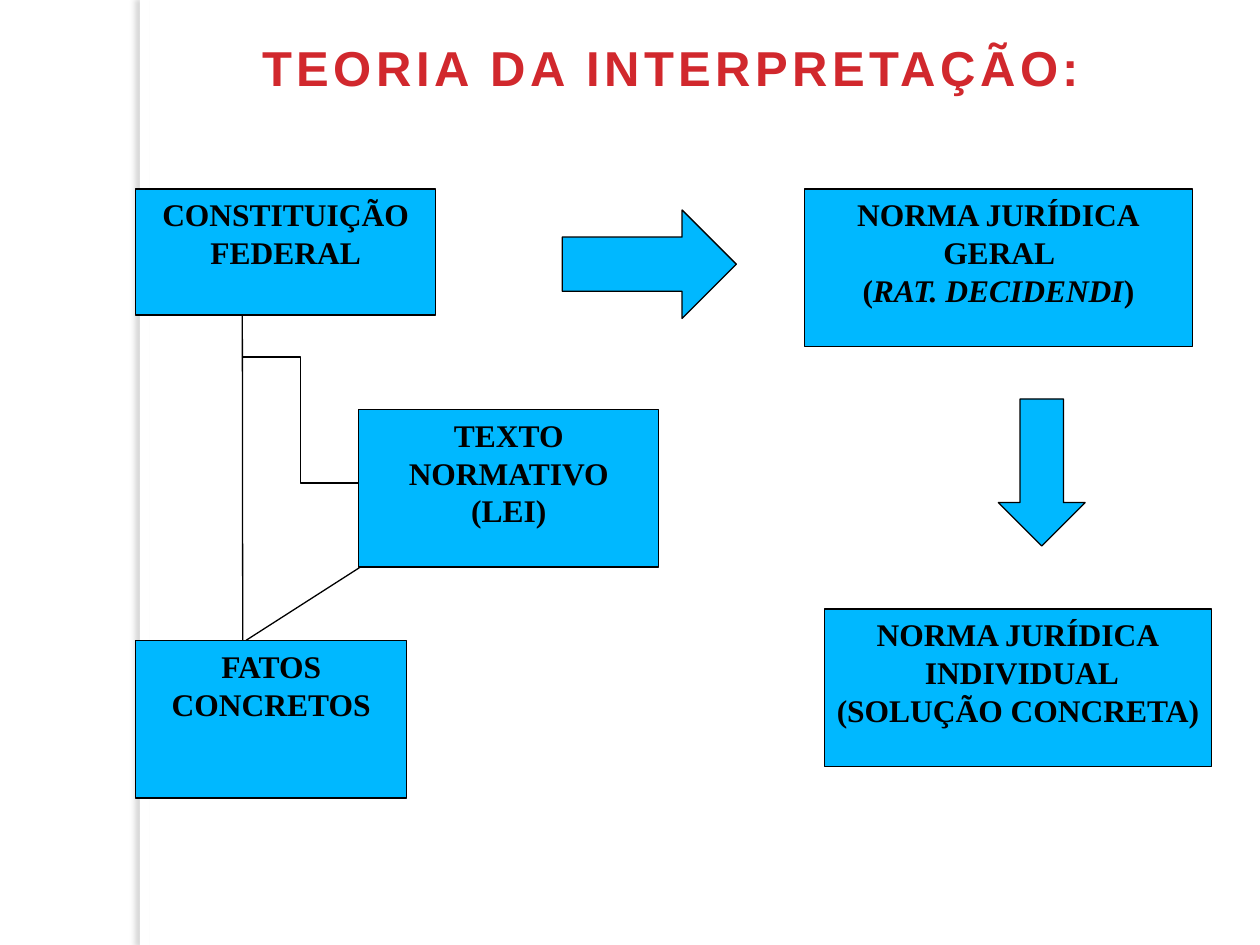
from dataclasses import dataclass
from typing import Any

from lxml.etree import SubElement
from pptx import Presentation
from pptx.dml.color import RGBColor
from pptx.enum.shapes import MSO_CONNECTOR as Link, MSO_SHAPE as Form
from pptx.enum.text import MSO_ANCHOR as Anchor, MSO_AUTO_SIZE as Fit, PP_ALIGN as Align
from pptx.oxml.ns import qn
from pptx.util import Pt

BLACK = RGBColor(0, 0, 0)
WHITE = RGBColor(255, 255, 255)
BLUE = RGBColor(0x00, 0xB8, 0xFF)
RED = RGBColor(0xD1, 0x28, 0x2D)
GREY = RGBColor(0x68, 0x68, 0x68)


def write(frame, text, font="Times New Roman", size=18, color=BLACK, space=0):
    for num, line in enumerate(text.split("\n")):
        para = frame.paragraphs[0] if num == 0 else frame.add_paragraph()
        para.alignment = Align.CENTER
        for part, words in enumerate(line.split("*")):
            run = para.add_run()
            run.text = words
            run.font.name = font
            run.font.size = Pt(size)
            run.font.bold = True
            run.font.italic = part % 2 == 1
            run.font.color.rgb = color
            if space:
                run.font._element.set("spc", str(round(space * 100)))


@dataclass
class Board:
    slide: Any
    fill: RGBColor = BLUE
    ink: RGBColor = BLACK
    width: float = 0.75

    def shape(self, form, x, y, w, h):
        item = self.slide.shapes.add_shape(form, Pt(x), Pt(y), Pt(w), Pt(h))
        item.shadow.inherit = False
        item.fill.solid()
        item.fill.fore_color.rgb = self.fill
        item.line.color.rgb = self.ink
        item.line.width = Pt(self.width)
        return item

    def box(self, text, x, y, w, h):
        frame = self.shape(Form.RECTANGLE, x, y, w, h).text_frame
        frame.word_wrap = True
        frame.vertical_anchor = Anchor.TOP
        write(frame, text)

    def line(self, x1, y1, x2, y2, kind=Link.STRAIGHT):
        item = self.slide.shapes.add_connector(kind, Pt(x1), Pt(y1), Pt(x2), Pt(y2))
        item.line.color.rgb = self.ink
        item.line.width = Pt(self.width)
        SubElement(item._element.spPr, qn("a:effectLst"))

    def strip(self, x, y, w, h):
        item = self.shape(Form.RECTANGLE, x, y, w, h)
        item.fill.fore_color.rgb = WHITE
        item.line.fill.background()
        effects = item._element.spPr.find(qn("a:effectLst"))
        shade = SubElement(effects, qn("a:outerShdw"), blurRad=str(Pt(3)),
                           dist=str(Pt(3)), dir="10800000", rotWithShape="0")
        tone = SubElement(shade, qn("a:srgbClr"), val=str(GREY))
        SubElement(tone, qn("a:alpha"), val="25000")

    def title(self, text, x, y, w, h):
        frame = self.slide.shapes.add_textbox(Pt(x), Pt(y), Pt(w), Pt(h)).text_frame
        frame.word_wrap = False
        frame.auto_size = Fit.SHAPE_TO_FIT_TEXT
        write(frame, text, font="Arial", size=28, color=RED, space=2.6)


def main():
    deck = Presentation()
    deck.slide_width, deck.slide_height = Pt(720), Pt(540)
    board = Board(deck.slides.add_slide(deck.slide_layouts[6]))

    board.strip(80, 0, 5.5, 540)
    board.box("FATOS\nCONCRETOS", 77.5, 366, 155, 90)
    board.line(138.5, 180, 138.7, 366)
    board.box("CONSTITUIÇÃO FEDERAL", 77.5, 108, 171.5, 90 - 18)
    board.line(138.5, 204, 205, 276, Link.ELBOW)
    board.box("TEXTO\nNORMATIVO\n(LEI)", 205, 234, 171.5, 90)
    board.line(206, 324, 140.5, 366)
    board.shape(Form.RIGHT_ARROW, 321.3, 120, 99.5, 62)
    board.box("NORMA JURÍDICA\n GERAL \n(*RAT. DECIDENDI*)", 459.8, 108, 221.5, 90)
    board.shape(Form.DOWN_ARROW, 570.5, 228, 49.6, 84)
    board.box("NORMA JURÍDICA\n INDIVIDUAL\n(SOLUÇÃO CONCRETA)", 471, 348, 221.5, 90)
    board.title("TEORIA DA INTERPRETAÇÃO:", 138.5, 18, 490, 41)

    deck.save("out.pptx")


if __name__ == "__main__":
    main()
